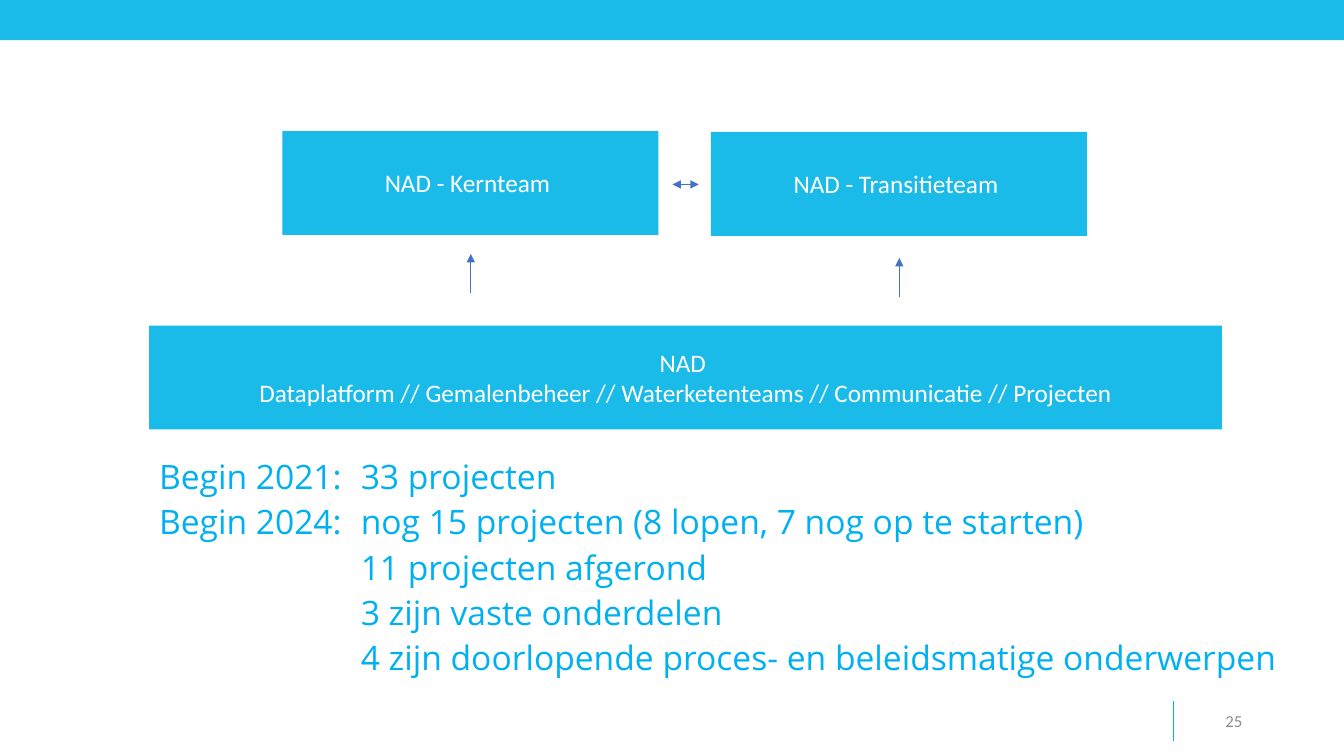
from lxml import etree
from pptx import Presentation
from pptx import util as u
from pptx.dml.color import RGBColor
from pptx.enum import shapes, text
from pptx.oxml.ns import qn

COLORS = {
    "team": "1BBBE9",
    "arrow": "4472C4",
    "accent": "00B0F0",
    "number": "8C8C8C",
    "white": "FFFFFF",
}
TAB = 200  # column in which the project counts start


def px(n):
    """100 px to the inch."""
    return u.Emu(n * 9144)


def rgb(name):
    return RGBColor.from_string(COLORS[name])


def style(paragraph, font, size, color, align):
    paragraph.alignment = align
    for run in paragraph.runs:
        run.font.name = font
        run.font.size = u.Pt(size)
        run.font.color.rgb = rgb(color)


def add_bar(slide, x, y, w, h, label=""):
    bar = slide.shapes.add_shape(shapes.MSO_SHAPE.RECTANGLE, px(x), px(y), px(w), px(h))
    bar.shadow.inherit = False
    bar.fill.solid()
    bar.fill.fore_color.rgb = rgb("team")
    bar.line.fill.background()
    if label:
        frame = bar.text_frame
        frame.word_wrap = True
        frame.vertical_anchor = text.MSO_ANCHOR.MIDDLE
        frame.text = label
        for paragraph in frame.paragraphs:
            style(paragraph, "Calibri", 18, "white", text.PP_ALIGN.CENTER)


def add_line(slide, x1, y1, x2, y2, color, ends=()):
    line = slide.shapes.add_connector(
        shapes.MSO_CONNECTOR.STRAIGHT, px(x1), px(y1), px(x2), px(y2))
    line.line.color.rgb = rgb(color)
    line.line.width = u.Pt(0.5)
    outline = line.line._get_or_add_ln()
    for end in ends:
        etree.SubElement(outline, qn(f"a:{end}"), type="triangle")
    etree.SubElement(line._element.spPr, qn("a:effectLst"))


def add_text_box(slide, x, y, w, h):
    frame = slide.shapes.add_textbox(px(x), px(y), px(w), px(h)).text_frame
    frame.word_wrap = True
    return frame


def add_project_list(slide, x, y, w, h, lines):
    frame = add_text_box(slide, x, y, w, h)
    frame.auto_size = text.MSO_AUTO_SIZE.TEXT_TO_FIT_SHAPE
    frame.text = "\n".join(lines)
    for i, paragraph in enumerate(frame.paragraphs):
        paragraph.line_spacing = 0.9
        if i:
            paragraph.space_before = u.Pt(10)
        props = paragraph._p.get_or_add_pPr()
        if "\t" in lines[i]:
            tabs = etree.SubElement(props, qn("a:tabLst"))
            etree.SubElement(tabs, qn("a:tab"), pos=str(px(TAB)), algn="l")
        else:
            props.set("marL", str(px(TAB)))
            props.set("indent", "0")
        style(paragraph, "Open Sans", 24, "accent", text.PP_ALIGN.LEFT)


def add_page_number(slide, x, y, w, h, number):
    frame = add_text_box(slide, x, y, w, h)
    frame.vertical_anchor = text.MSO_ANCHOR.MIDDLE
    frame.text = number
    style(frame.paragraphs[0], "Calibri", 12, "number", text.PP_ALIGN.RIGHT)


def main():
    prs = Presentation()
    prs.slide_width, prs.slide_height = px(1333), px(750)
    slide = prs.slides.add_slide(prs.slide_layouts[6])

    # Header band and page number
    add_line(slide, 1164, 695, 1164, 735, "accent")
    add_bar(slide, 0, 0, 1333, 40)
    add_page_number(slide, 942, 695, 300, 40, "25")

    # Teams
    add_bar(slide, 280, 130, 373, 103, "NAD - Kernteam ")
    add_bar(slide, 705, 131, 373, 103, "NAD - Transitieteam ")
    add_bar(slide, 148, 323, 1064, 103,
            "NAD \nDataplatform // Gemalenbeheer // Waterketenteams"
            " // Communicatie // Projecten")

    # Arrows between the teams
    add_line(slide, 467, 291, 467, 252, "arrow", ["tailEnd"])
    add_line(slide, 892, 295, 892, 256, "arrow", ["tailEnd"])
    add_line(slide, 667, 183, 693, 183, "arrow", ["headEnd", "tailEnd"])

    # Project counts
    add_project_list(slide, 148, 455, 1136, 240, [
        "Begin 2021:\t33 projecten",
        "Begin 2024:\tnog 15 projecten (8 lopen, 7 nog op te starten)",
        "11 projecten afgerond",
        "3 zijn vaste onderdelen",
        "4 zijn doorlopende proces- en beleidsmatige onderwerpen",
    ])

    prs.save("out.pptx")


if __name__ == "__main__":
    main()
